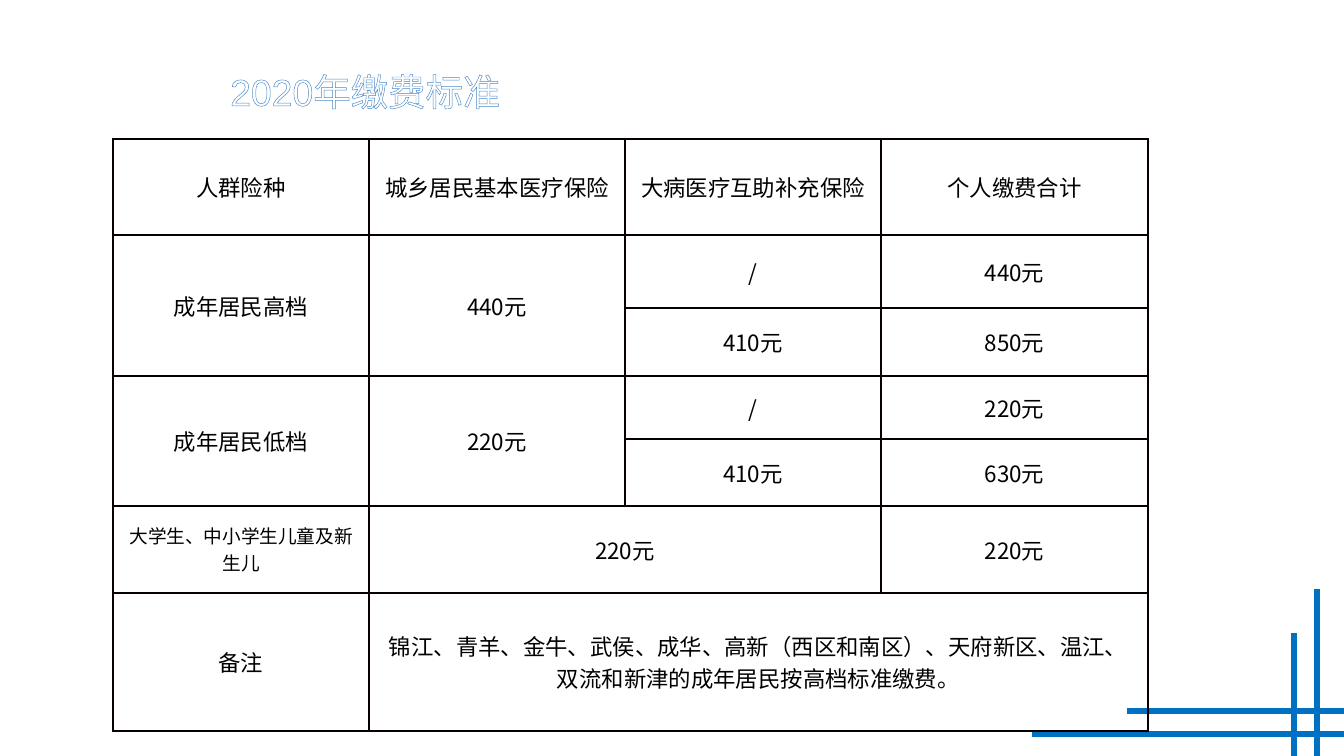
from lxml import etree
from pptx import Presentation
from pptx import util as u
from pptx.dml.color import RGBColor
from pptx.enum import shapes, text
from pptx.oxml.ns import qn

# Content
TITLE = "2020年缴费标准"
ROWS = [
    ["人群险种", "城乡居民基本医疗保险", "大病医疗互助补充保险", "个人缴费合计"],
    ["成年居民高档", "440元", "/", "440元"],
    ["", "", "410元", "850元"],
    ["成年居民低档", "220元", "/", "220元"],
    ["", "", "410元", "630元"],
    ["大学生、中小学生儿童及新生儿", "220元", "", "220元"],
    ["备注", "锦江、青羊、金牛、武侯、成华、高新（西区和南区）、天府新区、温江、"
     "双流和新津的成年居民按高档标准缴费。", "", ""],
]
MERGES = [((1, 0), (2, 0)), ((1, 1), (2, 1)), ((3, 0), (4, 0)),
          ((3, 1), (4, 1)), ((5, 1), (5, 2)), ((6, 1), (6, 3))]
SMALL_CELL = (5, 0)

# Layout in px
WIDTH, HEIGHT = 1344, 756
COLUMN_WIDTHS = [256, 256, 256, 267]
ROW_HEIGHTS = [96, 73, 68, 63, 67, 87, 138]
CORNER_LINES = [(1294, 633, 1294, HEIGHT), (1317, 589, 1317, HEIGHT),
                (1032, 734, WIDTH, 734), (1127, 711, WIDTH, 711)]
CJK_FONT = "Noto Sans CJK SC"


def px(length):
    return u.Emu(round(length * 914400 / 134.4))


def color(value):
    return RGBColor.from_string(value)


def add_line_xml(parent, tag, value, points):
    line = etree.SubElement(parent, qn(tag), w=str(u.Pt(points)))
    fill = etree.SubElement(line, qn("a:solidFill"))
    etree.SubElement(fill, qn("a:srgbClr"), val=value)
    return line


def add_span(para, content, size, font, value):
    span = para.add_run()
    span.text = content
    span.font.size = u.Pt(size)
    span.font.name = font
    span.font.color.rgb = color(value)
    properties = span._r.get_or_add_rPr()
    etree.SubElement(properties, qn("a:ea"), typeface=CJK_FONT)
    return properties


deck = Presentation()
deck.slide_width, deck.slide_height = px(WIDTH), px(HEIGHT)
page = deck.slides.add_slide(deck.slide_layouts[6])

# Crossing lines in the corner
for ends in CORNER_LINES:
    line = page.shapes.add_connector(shapes.MSO_CONNECTOR.STRAIGHT, *map(px, ends))
    line.line.color.rgb = color("0070C0")
    line.line.width = u.Pt(3)
    etree.SubElement(line._element.spPr, qn("a:effectLst"))

# Outlined title
box = page.shapes.add_textbox(px(165), px(62), px(367), px(59))
box.text_frame.word_wrap = True
para = box.text_frame.paragraphs[0]
para._p.get_or_add_pPr().set("indent", str(px(52)))
properties = add_span(para, TITLE, 20, "Arial", "FFFFFF")
properties.insert(0, add_line_xml(properties, "a:ln", "498AC8", 0.8))

# Fee table
frame = page.shapes.add_table(len(ROWS), len(COLUMN_WIDTHS), px(113), px(139),
                              px(sum(COLUMN_WIDTHS)), px(sum(ROW_HEIGHTS)))
table = frame.table
table.first_row = table.horz_banding = False
for column, width in zip(table.columns, COLUMN_WIDTHS):
    column.width = px(width)
for row, height in zip(table.rows, ROW_HEIGHTS):
    row.height = px(height)

for r, values in enumerate(ROWS):
    for c, value in enumerate(values):
        cell = table.cell(r, c)
        cell.vertical_anchor = text.MSO_ANCHOR.MIDDLE
        cell.margin_left = cell.margin_right = px(10)
        cell.margin_top = cell.margin_bottom = 0
        for side in ("a:lnL", "a:lnR", "a:lnT", "a:lnB"):
            add_line_xml(cell._tc.get_or_add_tcPr(), side, "080000", 1)
        cell.fill.background()
        if value:
            para = cell.text_frame.paragraphs[0]
            para.alignment = text.PP_ALIGN.CENTER
            size = 10 if (r, c) == SMALL_CELL else 12
            add_span(para, value, size, CJK_FONT, "000000")

for first, last in MERGES:
    table.cell(*first).merge(table.cell(*last))

deck.save("out.pptx")
